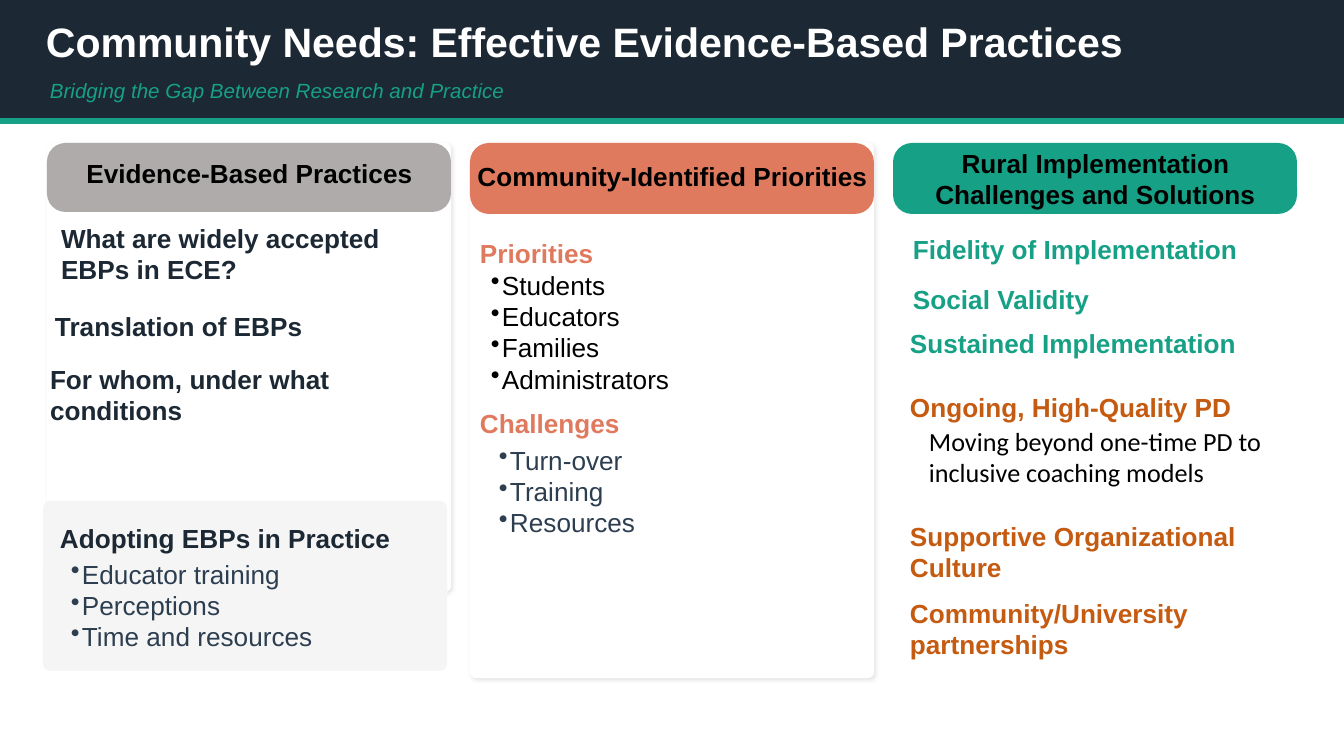
from dataclasses import dataclass

from lxml import etree
from pptx import Presentation
from pptx.dml.color import RGBColor
from pptx.enum.shapes import MSO_CONNECTOR, MSO_SHAPE
from pptx.enum.text import MSO_ANCHOR, MSO_AUTO_SIZE, PP_ALIGN
from pptx.oxml import parse_xml
from pptx.oxml.ns import nsdecls, qn
from pptx.util import Emu, Pt

RECT, ROUNDED = MSO_SHAPE.RECTANGLE, MSO_SHAPE.ROUNDED_RECTANGLE
STRAIGHT = MSO_CONNECTOR.STRAIGHT
LEFT, CENTER = PP_ALIGN.LEFT, PP_ALIGN.CENTER
TOP, NO_FIT = MSO_ANCHOR.TOP, MSO_AUTO_SIZE.NONE
PX = 914400 / 134.4


@dataclass(frozen=True)
class Theme:
    navy: str = "1C2833"
    slate: str = "2C3E50"
    teal: str = "16A085"
    coral: str = "E07A5F"
    rust: str = "C55A11"
    gray: str = "AFABAB"
    pale: str = "F5F5F5"
    white: str = "FFFFFF"
    black: str = "000000"
    font: str = "Arial"
    note_font: str = "Calibri"
    title_size: int = 22
    subtitle_size: int = 11
    body_size: int = 14


theme = Theme()


def add_block(kind, box, color, corner=None):
    block = slide.shapes.add_shape(kind, *[Emu(round(n * PX)) for n in box])
    block.shadow.inherit = False
    block.fill.solid()
    block.fill.fore_color.rgb = RGBColor.from_string(color)
    block.line.fill.background()
    if corner is not None:
        block.adjustments[0] = corner
    return block


def write(box, lines, color, size=theme.body_size, font=theme.font, bold=False, italic=False,
          align=LEFT, inset=0, before=0, after=0, bullet=False, holder=None):
    """Write one paragraph per line, in a new text box unless a holder is given."""
    holder = holder or slide.shapes.add_textbox(0, 0, 0, 0)
    holder.left, holder.top, holder.width, holder.height = [Emu(round(n * PX)) for n in box]
    frame = holder.text_frame
    frame.word_wrap, frame.auto_size, frame.vertical_anchor = True, NO_FIT, TOP
    frame.margin_left = Emu(round(inset * PX))
    frame.margin_top = frame.margin_right = frame.margin_bottom = 0
    for i, line in enumerate(lines):
        paragraph = frame.paragraphs[0] if i == 0 else frame.add_paragraph()
        paragraph.alignment = align
        paragraph.space_before, paragraph.space_after = Pt(before), Pt(after)
        if bullet:
            props = paragraph._p.get_or_add_pPr()
            indent = round(11 * PX)
            props.set("marL", str(indent))
            props.set("indent", str(-indent))
            etree.SubElement(props, qn("a:buChar"), char="•")
        run = paragraph.add_run()
        run.text = line
        run.font.name, run.font.size = font, Pt(size)
        run.font.bold, run.font.italic = bold, italic
        run.font.color.rgb = RGBColor.from_string(color)


prs = Presentation()
prs.slide_width, prs.slide_height = Emu(round(1344 * PX)), Emu(round(756 * PX))
slide = prs.slides.add_slide(prs.slide_layouts[5])

# Title band
add_block(RECT, (0, 0, 1344, 124), theme.navy)
rule = slide.shapes.add_connector(STRAIGHT, 0, Emu(round(121 * PX)), prs.slide_width,
                                  Emu(round(121 * PX)))
rule.line.color.rgb = RGBColor.from_string(theme.teal)
rule.line.width = Pt(3)
etree.SubElement(rule._element.spPr, qn("a:effectLst"))

title = slide.shapes.title
slide.shapes._spTree.append(title._element)  # bring the title in front of its band
write((46, 16, 1254, 47), ["Community Needs: Effective Evidence-Based Practices"],
      theme.white, theme.title_size, bold=True, holder=title)
write((50, 78, 1275, 23), ["Bridging the Gap Between Research and Practice"],
      theme.teal, theme.subtitle_size, italic=True, before=2)

# Columns: heading, heading box, tab colour, tab height, card height
column_left, column_step, column_top, column_width = 47, 423, 143, 404
columns = [
    ("Evidence-Based Practices", (43, 157, 413, 22), theme.gray, 69, 449),
    ("Community-Identified Priorities", (466, 160, 413, 46), theme.coral, 71, 535),
    ("Rural Implementation Challenges and Solutions", (914, 147, 363, 28), theme.teal, 71, None),
]
for i, (heading, heading_box, color, tab_height, card_height) in enumerate(columns):
    left = column_left + i * column_step
    if card_height:
        card = add_block(ROUNDED, (left, column_top, column_width, card_height),
                         theme.white, 0.014)
        effects = card._element.spPr.find(qn("a:effectLst"))
        effects.append(parse_xml(
            f'<a:outerShdw {nsdecls("a")} blurRad="{Pt(2.2)}" dist="{Pt(1.1)}" dir="2700000" '
            f'algn="bl" rotWithShape="0"><a:srgbClr val="{theme.black}">'
            '<a:alpha val="10000"/></a:srgbClr></a:outerShdw>'))
    add_block(ROUNDED, (left, column_top, column_width, tab_height), color, 0.267)
    write(heading_box, [heading], theme.black, bold=True, align=CENTER)

add_block(ROUNDED, (43, 501, 404, 170), theme.pale, 0.042)

# Bold topics: left, top, width, text, colour
topics = [
    (61, 222, 375, "What are widely accepted EBPs in ECE?", theme.navy),
    (55, 310, 375, "Translation of EBPs", theme.navy),
    (50, 363, 375, "For whom, under what conditions", theme.navy),
    (60, 522, 363, "Adopting EBPs in Practice", theme.navy),
    (480, 237, 363, "Priorities", theme.coral),
    (480, 407, 363, "Challenges", theme.coral),
    (913, 233, 363, "Fidelity of Implementation", theme.teal),
    (913, 283, 363, "Social Validity", theme.teal),
    (910, 327, 363, "Sustained Implementation", theme.teal),
    (910, 391, 363, "Ongoing, High-Quality PD", theme.rust),
    (910, 520, 363, "Supportive Organizational Culture", theme.rust),
    (910, 597, 363, "Community/University partnerships", theme.rust),
]
for left, top, width, topic, color in topics:
    write((left, top, width, 16), [topic], color, bold=True, after=2)

# Bulleted details: left, top, height, items, colour
details = [
    (60, 558, 59, ["Educator training", "Perceptions", "Time and resources"], theme.slate),
    (480, 269, 71, ["Students", "Educators", "Families", "Administrators"], theme.black),
    (488, 444, 77, ["Turn-over", "Training", "Resources"], theme.slate),
]
for left, top, height, items, color in details:
    write((left, top, 356, height), items, color, inset=11, bullet=True)

write((918, 425, 356, 77), ["Moving beyond one-time PD to inclusive coaching models"],
      theme.black, font=theme.note_font, inset=11)

prs.save("out.pptx")
